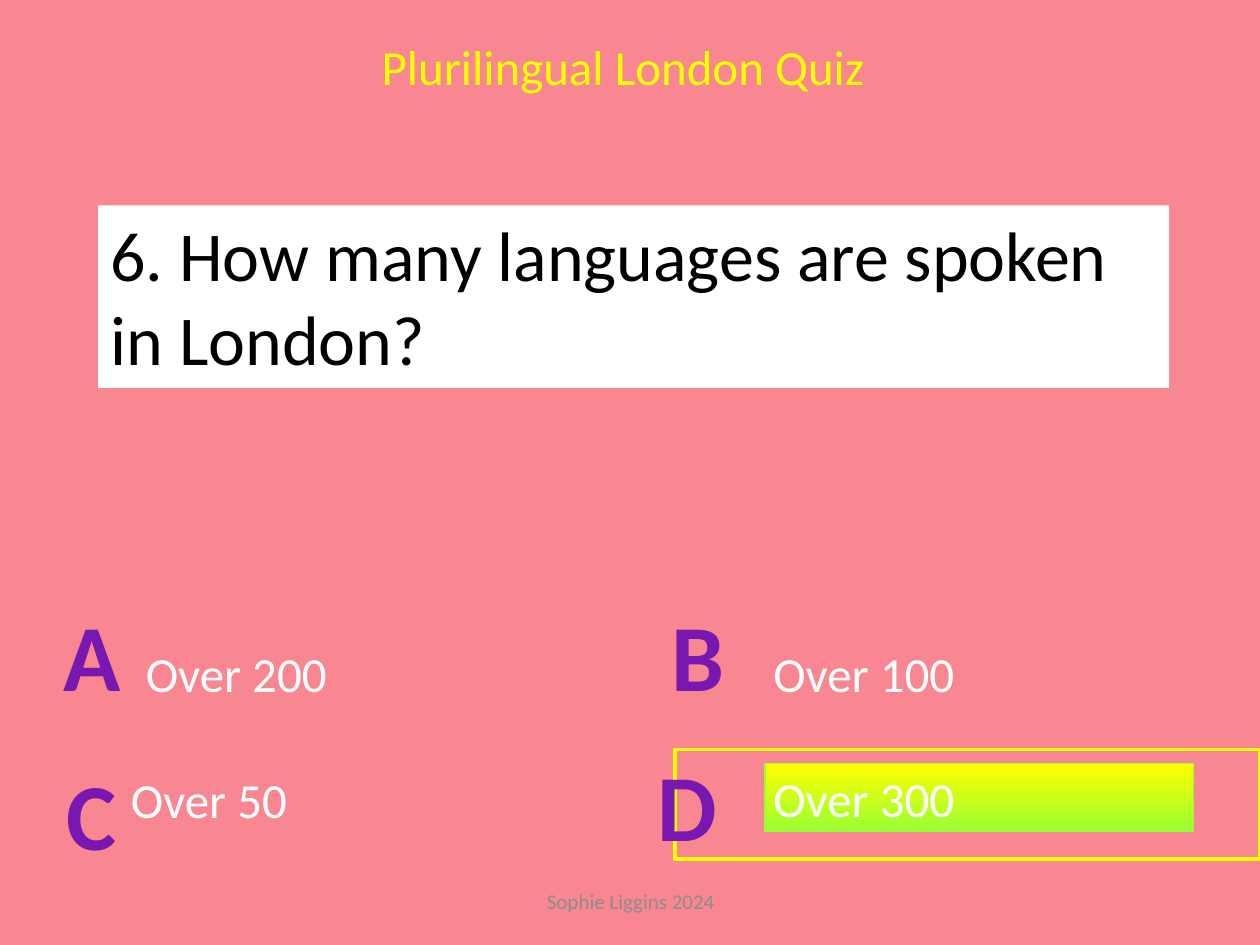
from pptx import Presentation
from pptx.dml.color import RGBColor
from pptx.enum.shapes import MSO_SHAPE
from pptx.enum.text import MSO_ANCHOR, PP_ALIGN
from pptx.util import Cm, Pt

RECTANGLE = MSO_SHAPE.RECTANGLE
TOP, MIDDLE = MSO_ANCHOR.TOP, MSO_ANCHOR.MIDDLE
LEFT, CENTER = PP_ALIGN.LEFT, PP_ALIGN.CENTER

FONT = "Calibri"
PINK, WHITE, BLACK = "F88792", "FFFFFF", "000000"
YELLOW, GREEN, PURPLE, GREY = "FFFF00", "99FF33", "7918B0", "8C8C8C"

# letter, answer, letter position, answer position (cm)
OPTIONS = [
    ("A", "Over 200", (0.91, 11.91), (2.69, 12.85)),
    ("B", "Over 100", (13.11, 11.91), (15.34, 12.85)),
    ("C", "Over 50", (0.89, 15.11), (2.39, 15.39)),
    ("D", "Over 300", (12.9, 14.94), (15.34, 15.37)),
]


def color(hex_string):
    return RGBColor.from_string(hex_string)


def lengths(box):
    return [Cm(value) for value in box]


def write(shape, text, size, hex_string, align=LEFT, anchor=TOP, bold=False, wrap=False):
    frame = shape.text_frame
    frame.word_wrap = wrap
    frame.vertical_anchor = anchor
    paragraph = frame.paragraphs[0]
    paragraph.alignment = align
    run = paragraph.add_run()
    run.text = text
    run.font.name = FONT
    run.font.size = Pt(size)
    run.font.bold = bold
    run.font.color.rgb = color(hex_string)


def add_text(slide, box, text, size, hex_string, **options):
    write(slide.shapes.add_textbox(*lengths(box)), text, size, hex_string, **options)


def add_rectangle(slide, box):
    shape = slide.shapes.add_shape(RECTANGLE, *lengths(box))
    shape.shadow.inherit = False
    return shape


def add_title(slide, box, text):
    title = slide.shapes.title
    title.left, title.top, title.width, title.height = lengths(box)
    write(title, text, 28, YELLOW)


def add_question(slide, box, text):
    panel = add_rectangle(slide, box)
    panel.fill.solid()
    panel.fill.fore_color.rgb = color(WHITE)
    panel.line.fill.background()
    write(panel, text, 40, BLACK, wrap=True)


def add_correct_marker(slide, box):
    """Gradient bar behind the right answer, inside a yellow frame."""
    left, top, width, height = box
    bar = add_rectangle(slide, (left + 1.81, top + 0.28, width - 3.15, height - 0.84))
    bar.fill.gradient()
    bar.fill.gradient_angle = 270
    for stop, hex_string, position in zip(bar.fill.gradient_stops, (YELLOW, GREEN), (0, 1)):
        stop.color.rgb = color(hex_string)
        stop.position = position
    bar.line.color.rgb = color(GREEN)
    bar.line.width = Pt(0.75)

    frame = add_rectangle(slide, box)
    frame.fill.background()
    frame.line.color.rgb = color(YELLOW)
    frame.line.width = Pt(2.25)


def add_option(slide, letter, answer, letter_position, answer_position):
    add_text(slide, (*answer_position, 4.3, 1.45), answer, 28, WHITE)
    add_text(slide, (*letter_position, 1.91, 2.57), letter, 54, PURPLE,
             align=CENTER, bold=True)


def main():
    presentation = Presentation()
    presentation.slide_width, presentation.slide_height = Cm(25.4), Cm(19.05)
    slide = presentation.slides.add_slide(presentation.slide_layouts[5])
    slide.background.fill.solid()
    slide.background.fill.fore_color.rgb = color(PINK)

    add_title(slide, (7.44, 0.61, 10.74, 1.45), "Plurilingual London Quiz")
    add_question(slide, (1.98, 4.14, 21.59, 3.68),
                 "6. How many languages are spoken in London?")
    add_correct_marker(slide, (13.61, 15.11, 11.79, 2.21))
    for option in OPTIONS:
        add_option(slide, *option)
    add_text(slide, (8.69, 17.65, 8.05, 1.02), "Sophie Liggins 2024", 12, GREY,
             align=CENTER, anchor=MIDDLE, wrap=True)

    presentation.save("out.pptx")


if __name__ == "__main__":
    main()
